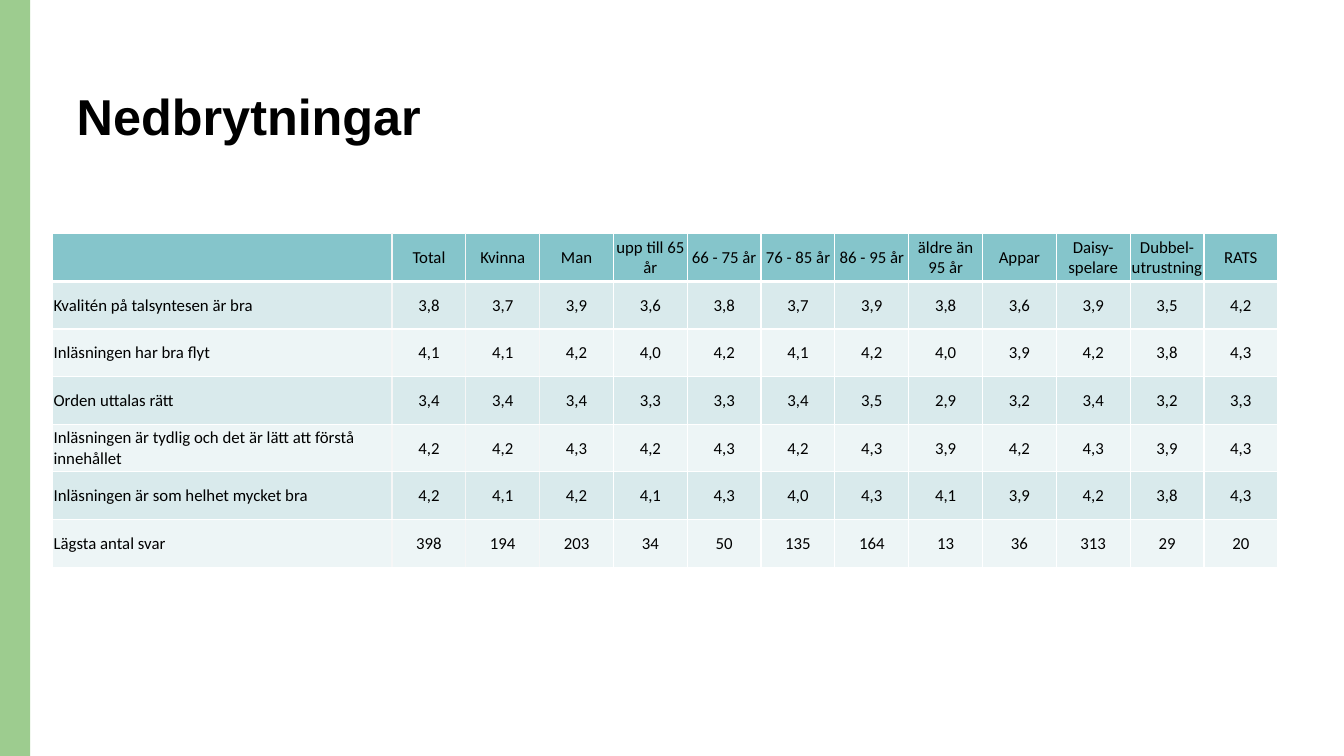
from lxml import etree
from pptx import Presentation
from pptx.dml.color import RGBColor
from pptx.enum.shapes import MSO_SHAPE
from pptx.enum.text import MSO_ANCHOR, MSO_AUTO_SIZE, PP_ALIGN
from pptx.oxml.ns import qn
from pptx.util import Cm, Pt

RECTANGLE = MSO_SHAPE.RECTANGLE
LEFT, CENTER = PP_ALIGN.LEFT, PP_ALIGN.CENTER
MIDDLE, BOTTOM = MSO_ANCHOR.MIDDLE, MSO_ANCHOR.BOTTOM
NO_AUTOFIT = MSO_AUTO_SIZE.NONE

COLORS = {
    "band": "9DCC8F",
    "text": "000000",
    "header": "85C5CB",
    "odd_row": "D9EAEC",
    "even_row": "EDF5F6",
    "border": "FFFFFF",
    "soft_border": "F6F6F6",
}
SOFT_BORDER_COLUMNS = 3

RATINGS = [
    ["", "Total", "Kvinna", "Man", "upp till 65 år", "66 - 75 år", "76 - 85 år", "86 - 95 år",
     "äldre än 95 år", "Appar", "Daisy-spelare", "Dubbel-utrustning", "RATS"],
    ["Kvalitén på talsyntesen är bra", "3,8", "3,7", "3,9", "3,6", "3,8", "3,7", "3,9",
     "3,8", "3,6", "3,9", "3,5", "4,2"],
    ["Inläsningen har bra flyt", "4,1", "4,1", "4,2", "4,0", "4,2", "4,1", "4,2",
     "4,0", "3,9", "4,2", "3,8", "4,3"],
    ["Orden uttalas rätt", "3,4", "3,4", "3,4", "3,3", "3,3", "3,4", "3,5",
     "2,9", "3,2", "3,4", "3,2", "3,3"],
    ["Inläsningen är tydlig och det är lätt att förstå innehållet", "4,2", "4,2", "4,3", "4,2",
     "4,3", "4,2", "4,3", "3,9", "4,2", "4,3", "3,9", "4,3"],
    ["Inläsningen är som helhet mycket bra", "4,2", "4,1", "4,2", "4,1", "4,3", "4,0", "4,3",
     "4,1", "3,9", "4,2", "3,8", "4,3"],
    ["Lägsta antal svar", "398", "194", "203", "34", "50", "135", "164",
     "13", "36", "313", "29", "20"],
]


class SlideBuilder:
    title_font = "Arial"
    table_font = "Calibri"

    def __init__(self, slide):
        self.slide = slide

    def color(self, name):
        return RGBColor.from_string(COLORS[name])

    def style_font(self, font, name, size, bold=False):
        font.name, font.size, font.bold = name, Pt(size), bold
        font.color.rgb = self.color("text")

    def band(self, left, top, width, height):
        band = self.slide.shapes.add_shape(RECTANGLE, Cm(left), Cm(top), Cm(width), Cm(height))
        band.shadow.inherit = False
        band.fill.solid()
        band.fill.fore_color.rgb = self.color("band")
        band.line.fill.background()

    def title(self, wording, left, top, width, height):
        title = self.slide.shapes.title
        title.left, title.top, title.width, title.height = map(Cm, (left, top, width, height))
        frame = title.text_frame
        frame.text = wording
        frame.auto_size = NO_AUTOFIT
        frame.vertical_anchor = BOTTOM
        heading = frame.paragraphs[0]
        heading.alignment = LEFT
        heading.line_spacing = 0.9
        self.style_font(heading.runs[0].font, self.title_font, 36, bold=True)

    def border(self, cell, side, color_name, points):
        """Add one edge (L, R, T or B); must precede the cell's fill."""
        properties = cell._tc.get_or_add_tcPr()
        edge = etree.SubElement(properties, qn(f"a:ln{side}"), w=str(Pt(points)))
        fill = etree.SubElement(edge, qn("a:solidFill"))
        etree.SubElement(fill, qn("a:srgbClr"), val=COLORS[color_name])

    def cell(self, cell, wording, row, column):
        cell.margin_left = cell.margin_right = cell.margin_top = Cm(0.02)
        cell.margin_bottom = 0
        cell.vertical_anchor = MIDDLE
        left_edge = "soft_border" if 0 < column <= SOFT_BORDER_COLUMNS else "border"
        right_edge = "soft_border" if column < SOFT_BORDER_COLUMNS else "border"
        self.border(cell, "L", left_edge, 1)
        self.border(cell, "R", right_edge, 1)
        self.border(cell, "T", "border", 1)
        self.border(cell, "B", "border", 3 if row == 0 else 1)
        cell.fill.solid()
        fill_name = "header" if row == 0 else "odd_row" if row % 2 else "even_row"
        cell.fill.fore_color.rgb = self.color(fill_name)
        cell.text_frame.text = wording
        paragraph = cell.text_frame.paragraphs[0]
        paragraph.alignment = CENTER if column else LEFT
        self.style_font(paragraph.font, self.table_font, 12)
        for run in paragraph.runs:
            self.style_font(run.font, self.table_font, 12)

    def table(self, rows, left, top, label_width, value_width, row_height):
        value_columns = len(rows[0]) - 1
        table = self.slide.shapes.add_table(
            len(rows), len(rows[0]), Cm(left), Cm(top),
            Cm(label_width + value_columns * value_width), Cm(len(rows) * row_height)).table
        for index, column in enumerate(table.columns):
            column.width = Cm(value_width if index else label_width)
        for row_index, row in enumerate(rows):
            table.rows[row_index].height = Cm(row_height)
            for column_index, wording in enumerate(row):
                self.cell(table.cell(row_index, column_index), wording, row_index, column_index)


def main():
    presentation = Presentation()
    presentation.slide_width, presentation.slide_height = Cm(33.87), Cm(19.05)
    title_only = presentation.slide_layouts[5]
    builder = SlideBuilder(presentation.slides.add_slide(title_only))
    builder.band(0, 0, 0.76, 19.05)
    builder.title("Nedbrytningar", 1.68, 1.3, 30.35, 2.51)
    builder.table(RATINGS, left=1.33, top=5.89, label_width=8.55, value_width=1.86, row_height=1.2)
    presentation.save("out.pptx")


if __name__ == "__main__":
    main()
